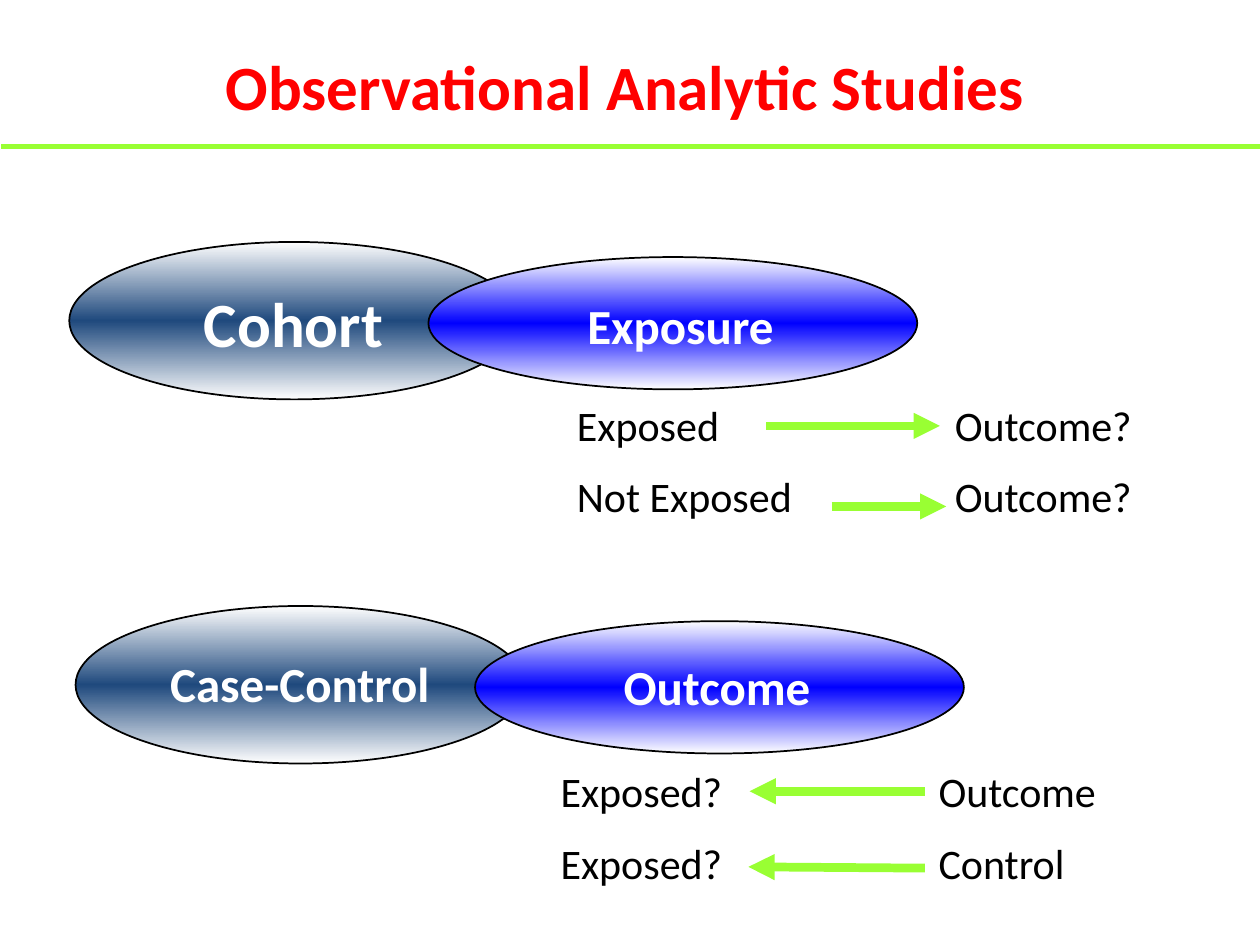
"""Build the slide that contrasts cohort and case-control studies."""
import copy
from dataclasses import dataclass

import lxml.etree
import pptx
import pptx.dml.color
import pptx.enum.shapes
import pptx.enum.text
import pptx.oxml.ns
import pptx.util

Inches = pptx.util.Inches
Align = pptx.enum.text.PP_ALIGN
Anchor = pptx.enum.text.MSO_ANCHOR
qualified = pptx.oxml.ns.qn


@dataclass(frozen=True)
class Theme:
    font: str = "Calibri"
    title: str = "FF0000"
    accent: str = "99FF33"
    navy: str = "1F497D"
    blue: str = "0000FF"
    white: str = "FFFFFF"
    black: str = "000000"
    large: int = 36
    medium: int = 28
    body: int = 24
    rule_width: int = 3
    arrow_width: int = 5


THEME = Theme()


@dataclass(frozen=True)
class Box:
    left: float
    top: float
    width: float
    height: float


@dataclass(frozen=True)
class Ellipse:
    box: Box
    color: str
    label: str
    label_box: Box
    size: int = THEME.medium


@dataclass(frozen=True)
class Arrow:
    start: tuple[float, float]
    end: tuple[float, float]
    head: str


@dataclass(frozen=True)
class Study:
    ellipses: tuple[Ellipse, ...]
    rows: tuple[str, ...]
    rows_box: Box
    arrows: tuple[Arrow, ...]


STUDIES = (
    Study(
        (
            Ellipse(Box(0.55, 1.92, 3.57, 1.25), THEME.navy, "Cohort",
                    Box(0.86, 2.21, 2.94, 0.7), THEME.large),
            Ellipse(Box(3.4, 2.04, 3.88, 1.05), THEME.blue, "Exposure",
                    Box(3.93, 2.3, 2.94, 0.57)),
        ),
        ("Exposed\t\tOutcome?", "Not Exposed\t\tOutcome?"),
        Box(4.48, 3.12, 5.69, 1.1),
        (Arrow((6.08, 3.38), (7.46, 3.38), "tailEnd"),
         Arrow((6.6, 4.02), (7.51, 4.02), "tailEnd")),
    ),
    Study(
        (
            Ellipse(Box(0.6, 4.81, 3.57, 1.25), THEME.navy, "Case-Control",
                    Box(0.91, 5.14, 2.94, 0.57)),
            Ellipse(Box(3.77, 4.93, 3.88, 1.05), THEME.blue, "Outcome",
                    Box(4.22, 5.16, 2.94, 0.57)),
        ),
        ("Exposed?\t\tOutcome", "Exposed?\t\tControl"),
        Box(4.35, 6.03, 5.69, 1.1),
        (Arrow((5.95, 6.28), (7.34, 6.28), "headEnd"),
         Arrow((5.94, 6.88), (7.34, 6.89), "headEnd")),
    ),
)


def rgb(color: str) -> pptx.dml.color.RGBColor:
    """Turn a hexadecimal string into a colour."""
    return pptx.dml.color.RGBColor.from_string(color)


def inches(box: Box) -> tuple:
    """Return the four lengths of a box."""
    return tuple(map(Inches, (box.left, box.top, box.width, box.height)))


def set_tab_stops(paragraph, positions: tuple[float, ...]) -> None:
    """Give a paragraph left tab stops at positions in inches."""
    properties = paragraph._p.get_or_add_pPr()
    tab_list = lxml.etree.SubElement(properties, qualified("a:tabLst"))
    for position in positions:
        lxml.etree.SubElement(tab_list, qualified("a:tab"),
                              pos=str(int(Inches(position))), algn="l")


def write(text_frame, *lines: str, size: int, color: str, bold: bool = False,
          align=Align.LEFT, anchor=Anchor.TOP, space_before: float = 0,
          tab_stops: tuple[float, ...] = ()) -> None:
    """Write formatted lines, one paragraph each."""
    text_frame.word_wrap = True
    text_frame.vertical_anchor = anchor
    for index, line in enumerate(lines):
        paragraph = text_frame.add_paragraph() if index else text_frame.paragraphs[0]
        paragraph.alignment = align
        paragraph.space_before = pptx.util.Pt(space_before)
        if tab_stops:
            set_tab_stops(paragraph, tab_stops)
        run = paragraph.add_run()
        run.text = line
        run.font.name = THEME.font
        run.font.size = pptx.util.Pt(size)
        run.font.bold = bold
        run.font.color.rgb = rgb(color)


def draw_line(shapes, start: tuple[float, float], end: tuple[float, float],
              width: int, head: str = "") -> None:
    """Draw a straight accent line with an optional arrowhead."""
    connector = shapes.add_connector(
        pptx.enum.shapes.MSO_CONNECTOR.STRAIGHT, *map(Inches, start + end))
    connector.line.color.rgb = rgb(THEME.accent)
    connector.line.width = pptx.util.Pt(width)
    properties = connector._element.spPr
    if head:
        outline = properties.find(qualified("a:ln"))
        lxml.etree.SubElement(outline, qualified(f"a:{head}"), type="triangle")
    lxml.etree.SubElement(properties, qualified("a:effectLst"))


def draw_ellipse(shapes, ellipse: Ellipse) -> None:
    """Draw a gradient ellipse and its label."""
    shape = shapes.add_shape(pptx.enum.shapes.MSO_SHAPE.OVAL, *inches(ellipse.box))
    shape.shadow.inherit = False
    shape.line.color.rgb = rgb(THEME.black)
    shape.line.width = pptx.util.Pt(1)
    shape.fill.gradient()
    shape.fill.gradient_angle = 90
    stop_list = shape._element.spPr.find(".//" + qualified("a:gsLst"))
    stop_list.append(copy.deepcopy(stop_list[0]))
    colors = (THEME.white, ellipse.color, THEME.white)
    for index, (stop, color) in enumerate(zip(shape.fill.gradient_stops, colors)):
        stop.position = index / 2
        stop.color.rgb = rgb(color)
    label = shapes.add_textbox(*inches(ellipse.label_box))
    write(label.text_frame, ellipse.label, size=ellipse.size, color=THEME.white,
          bold=True, align=Align.CENTER, space_before=ellipse.size / 2)


def draw_study(slide, study: Study) -> None:
    """Draw one study design as a group."""
    shapes = slide.shapes.add_group_shape().shapes
    for ellipse in study.ellipses:
        draw_ellipse(shapes, ellipse)
    rows = shapes.add_textbox(*inches(study.rows_box))
    write(rows.text_frame, *study.rows, size=THEME.body, color=THEME.black,
          space_before=THEME.body / 2, tab_stops=(2, 3))
    for arrow in study.arrows:
        draw_line(shapes, arrow.start, arrow.end, THEME.arrow_width, arrow.head)


def main() -> None:
    """Build and save the presentation."""
    presentation = pptx.Presentation()
    presentation.slide_width, presentation.slide_height = Inches(10), Inches(7.5)
    slide = presentation.slides.add_slide(presentation.slide_layouts[5])
    title = slide.shapes.title
    title.left, title.top, title.width, title.height = inches(Box(0.46, 0.1, 9, 1.15))
    write(title.text_frame, "Observational Analytic Studies", size=THEME.large,
          color=THEME.title, bold=True, align=Align.CENTER, anchor=Anchor.MIDDLE)
    draw_line(slide.shapes, (0.01, 1.16), (10.01, 1.16), THEME.rule_width)
    for study in STUDIES:
        draw_study(slide, study)
    presentation.save("out.pptx")


if __name__ == "__main__":
    main()
